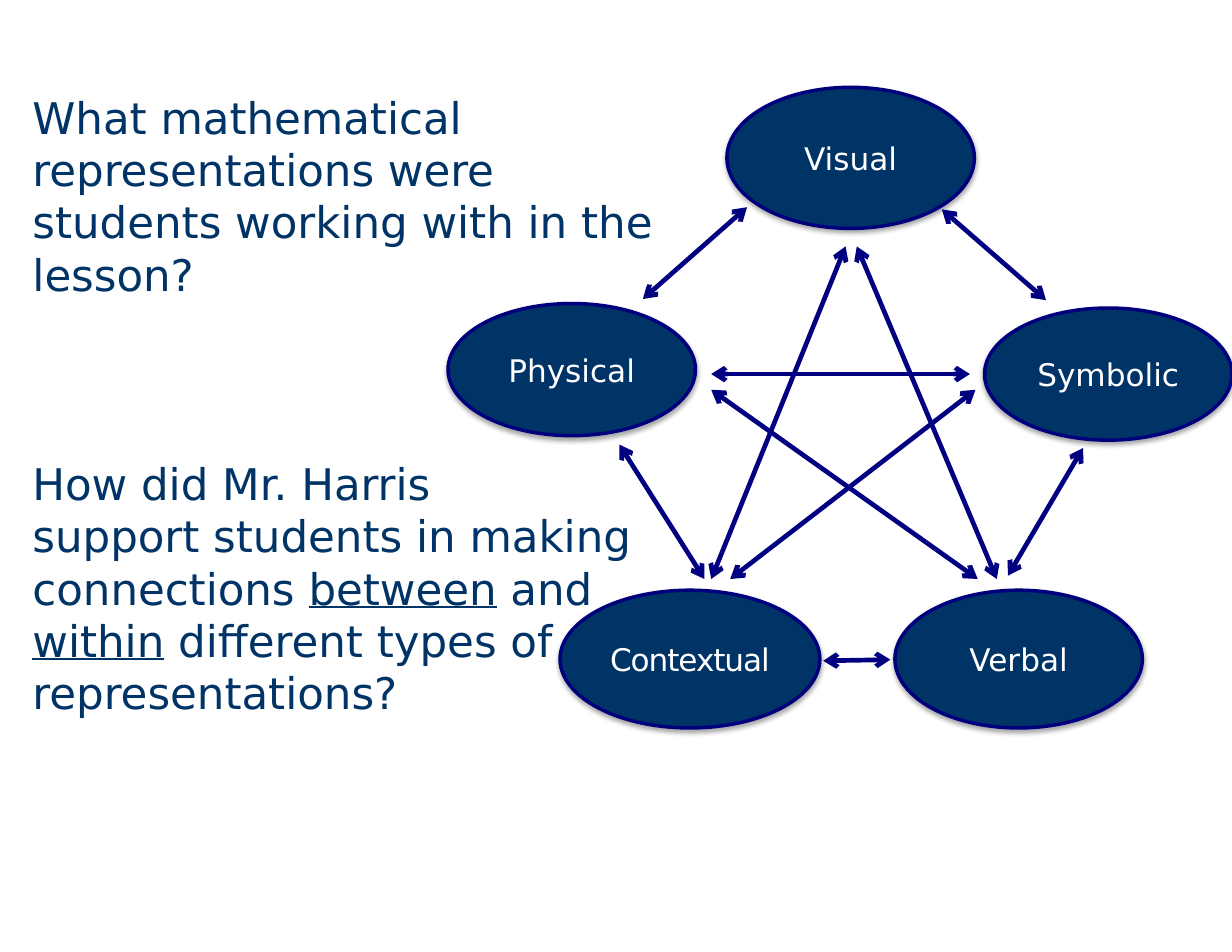
"""Build a slide linking five mathematical representations beside two discussion questions."""
from lxml import etree
from pptx import Presentation
from pptx import util as u
from pptx.dml.color import RGBColor
from pptx.enum import shapes, text
from pptx.oxml.ns import qn

NAVY = RGBColor(0x00, 0x33, 0x66)
OUTLINE = RGBColor(0x00, 0x00, 0x7D)
ARROW = RGBColor(0x00, 0x00, 0x80)
WHITE = RGBColor(0xFF, 0xFF, 0xFF)
FONT = "DejaVu Sans"


def add_span(para, words, size, color):
    span = para.add_run()
    span.text = words
    span.font.name = FONT
    span.font.size = u.Pt(size)
    span.font.color.rgb = color
    return span


deck = Presentation()
deck.slide_width, deck.slide_height = u.Inches(11), u.Inches(8.5)
page = deck.slides.add_slide(deck.slide_layouts[6])

box = page.shapes.add_textbox(u.Inches(0.18), u.Inches(0.75), u.Inches(5.98), u.Inches(7.56))
frame = box.text_frame
frame.word_wrap = True
frame.margin_left = frame.margin_right = u.Inches(0.11)
frame.margin_top = frame.margin_bottom = u.Inches(0.06)
para = frame.paragraphs[0]
add_span(para, "What mathematical representations were students working with in the lesson?", 28, NAVY)

para = frame.add_paragraph()
para.space_before = u.Pt(101)
add_span(para, "How did Mr. Harris ", 28, NAVY)
para.add_line_break()
for words, underlined in [
    ("support students in making connections ", False),
    ("between", True),
    (" and ", False),
    ("within", True),
    (" different types of representations?", False),
]:
    add_span(para, words, 28, NAVY).font.underline = underlined

representations = [
    ("Contextual", 5, 5.27, 2.32, 1.23),
    ("Physical", 4, 2.71, 2.21, 1.18),
    ("Visual", 6.49, 0.78, 2.21, 1.26),
    ("Symbolic", 8.79, 2.75, 2.21, 1.18),
    ("Verbal", 7.99, 5.27, 2.21, 1.23),
]
for name, *place in representations:
    oval = page.shapes.add_shape(shapes.MSO_SHAPE.OVAL, *map(u.Inches, place))
    oval.fill.solid()
    oval.fill.fore_color.rgb = NAVY
    oval.line.color.rgb = OUTLINE
    oval.line.width = u.Pt(2.25)
    oval.shadow.inherit = False
    effects = oval._element.spPr.find(qn("a:effectLst"))
    shadow = etree.SubElement(effects, qn("a:outerShdw"), blurRad="40000", dist="23000",
                              dir="5400000", rotWithShape="0")
    shade = etree.SubElement(shadow, qn("a:srgbClr"), val="000000")
    etree.SubElement(shade, qn("a:alpha"), val="35000")
    frame = oval.text_frame
    frame.margin_left = frame.margin_right = frame.margin_top = frame.margin_bottom = 0
    frame.vertical_anchor = text.MSO_ANCHOR.MIDDLE
    para = frame.paragraphs[0]
    para.alignment = text.PP_ALIGN.CENTER
    span = add_span(para, name, 20, WHITE)
    if name == "Contextual":
        span.font._element.set("spc", "-70")

links = [
    (6.35, 3.34, 8.66, 3.34),
    (5.74, 2.67, 6.67, 1.85),
    (9, 5.14, 9.67, 4),
    (7.35, 5.9, 7.95, 5.89),
    (8.9, 5.17, 7.65, 2.2),
    (6.52, 5.17, 8.71, 3.48),
    (6.35, 5.17, 7.55, 2.2),
    (8.73, 5.17, 6.35, 3.48),
    (9.34, 2.68, 8.41, 1.87),
    (6.29, 5.17, 5.53, 3.97),
]
for ends in links:
    link = page.shapes.add_connector(shapes.MSO_CONNECTOR.STRAIGHT, *map(u.Inches, ends))
    link.line.color.rgb = ARROW
    link.line.width = u.Pt(3)
    stroke = link.line._get_or_add_ln()
    for end in ("a:headEnd", "a:tailEnd"):
        etree.SubElement(stroke, qn(end), type="arrow")
    etree.SubElement(link._element.spPr, qn("a:effectLst"))

deck.save("out.pptx")
